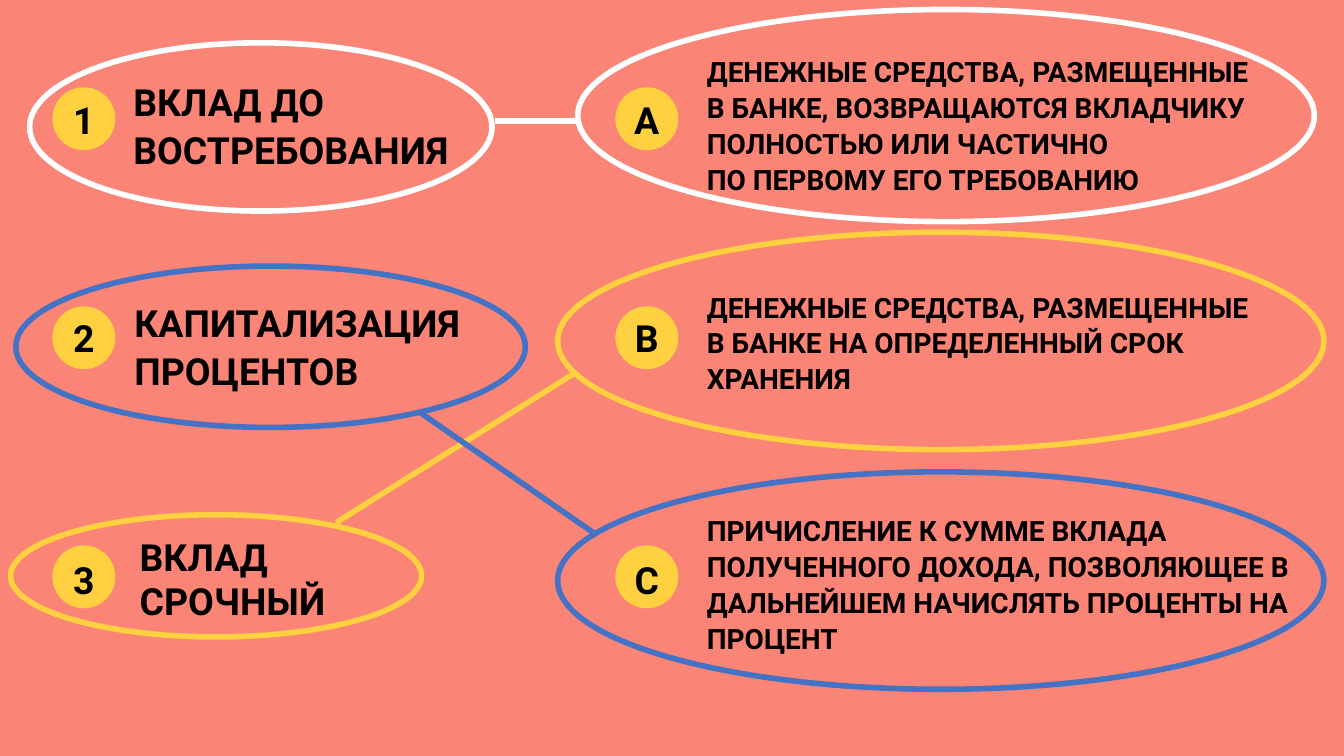
from lxml import etree
from pptx import Presentation
from pptx.dml.color import RGBColor
from pptx.enum.shapes import MSO_CONNECTOR, MSO_SHAPE
from pptx.enum.text import PP_ALIGN
from pptx.oxml.ns import qn
from pptx.util import Cm, Pt

OVAL, RECT = MSO_SHAPE.OVAL, MSO_SHAPE.RECTANGLE
LINE = MSO_CONNECTOR.STRAIGHT
LEFT, MID = PP_ALIGN.LEFT, PP_ALIGN.CENTER

COLORS = {"coral": "FA8475", "gold": "FFD040", "white": "FFFFFF",
          "blue": "4472C4", "ink": "000000"}
FONT = "Roboto"
WIDE, HIGH = 25.4, 14.29

# Boxes are left, top, width, height in cm; each text is a list of
# paragraphs, and "\n" marks a line break inside one
TERMS = [
    (["ВКЛАД ДО ВОСТРЕБОВАНИЯ"], (2.39, 1.3, 7.37, 2.01), 1.07),
    (["КАПИТАЛИЗАЦИЯ ПРОЦЕНТОВ"], (2.41, 5.49, 8.59, 2.01), 1.07),
    (["ВКЛАД", "СРОЧНЫЙ"], (2.51, 9.96, 6.5, 1.96), 1),
]
MEANINGS = [
    ("ДЕНЕЖНЫЕ СРЕДСТВА, РАЗМЕЩЕННЫЕ\nВ БАНКЕ, ВОЗВРАЩАЮТСЯ ВКЛАДЧИКУ "
     "ПОЛНОСТЬЮ ИЛИ ЧАСТИЧНО\nПО ПЕРВОМУ ЕГО ТРЕБОВАНИЮ", 0.86, 3.96),
    ("ДЕНЕЖНЫЕ СРЕДСТВА, РАЗМЕЩЕННЫЕ\nВ БАНКЕ НА ОПРЕДЕЛЕННЫЙ СРОК "
     "ХРАНЕНИЯ", 5.31, 2.31),
    ("ПРИЧИСЛЕНИЕ К СУММЕ ВКЛАДА ПОЛУЧЕННОГО ДОХОДА, ПОЗВОЛЯЮЩЕЕ "
     "В ДАЛЬНЕЙШЕМ НАЧИСЛЯТЬ ПРОЦЕНТЫ НА ПРОЦЕНТ", 9.53, 2.92),
]
TEXT_X, TEXT_W = 13.23, 11.73

# Badge columns: left edge and marks; rows: top of disc, top of mark
COLUMNS = [(0.99, "123"), (11.63, "АBC")]
ROWS = [(1.65, 1.65), (5.79, 5.77), (10.31, 10.34)]
DISC, MARK_W, MARK_H = 1.19, 1.55, 1.09

# Matches: color, term oval, meaning oval, line from x, y to x, y
MATCHES = [
    ("white", (0.56, 0.81, 8.74, 3.18), (10.92, 0.18, 13.92, 4.01),
     (9.35, 2.29, 10.9, 2.29)),
    ("gold", (0.2, 9.73, 7.77, 2.31), (10.54, 4.39, 14.48, 4.11),
     (6.35, 9.88, 10.85, 7.06)),
    ("blue", (0.3, 5.03, 9.63, 3.05), (10.54, 8.92, 14.48, 4.11),
     (7.9, 7.77, 11.23, 10.08)),
]


def paint(name):
    return RGBColor.from_string(COLORS[name])


def lengths(box):
    return [Cm(n) for n in box]


def add_shape(kind, box, fill=None, line=None):
    shape = slide.shapes.add_shape(kind, *lengths(box))
    shape.shadow.inherit = False
    if fill:
        shape.fill.solid()
        shape.fill.fore_color.rgb = paint(fill)
    else:
        shape.fill.background()
    if line:
        shape.line.color.rgb = paint(line)
        shape.line.width = Pt(3)
    else:
        shape.line.fill.background()


def add_text(texts, box, size, align=LEFT, space=1.07):
    frame = slide.shapes.add_textbox(*lengths(box)).text_frame
    frame.word_wrap = True
    frame.margin_left = frame.margin_right = Cm(0.13)
    frame.margin_top = frame.margin_bottom = Cm(0.13)
    for i, text in enumerate(texts):
        para = frame.add_paragraph() if i else frame.paragraphs[0]
        para.alignment = align
        para.line_spacing = float(space)
        for j, part in enumerate(text.split("\n")):
            if j:
                para.add_line_break()
            run = para.add_run()
            run.text = part
            run.font.name = FONT
            run.font.size = Pt(size)
            run.font.bold = True
            run.font.color.rgb = paint("ink")


def add_link(ends, color):
    link = slide.shapes.add_connector(LINE, *lengths(ends))
    link.line.color.rgb = paint(color)
    link.line.width = Pt(3)
    etree.SubElement(link._element.spPr, qn("a:effectLst"))


deck = Presentation()
deck.slide_width, deck.slide_height = Cm(WIDE), Cm(HIGH)
slide = deck.slides.add_slide(deck.slide_layouts[6])

# Backdrop
add_shape(RECT, (0, 0, WIDE, HIGH), fill="coral")

# Numbered and lettered badges
for x, marks in COLUMNS:
    for mark, (top, base) in zip(marks, ROWS):
        add_shape(OVAL, (x, top, DISC, DISC), fill="gold")
        left = x + (DISC - MARK_W) / 2
        add_text([mark], (left, base, MARK_W, MARK_H), 20, MID)

# Terms and meanings
for texts, box, space in TERMS:
    add_text(texts, box, 20, space=space)
for text, top, high in MEANINGS:
    add_text([text], (TEXT_X, top, TEXT_W, high), 15)

# Ovals and the lines that match them
for color, term, meaning, ends in MATCHES:
    add_shape(OVAL, term, line=color)
    add_shape(OVAL, meaning, line=color)
    add_link(ends, color)

deck.save("out.pptx")
